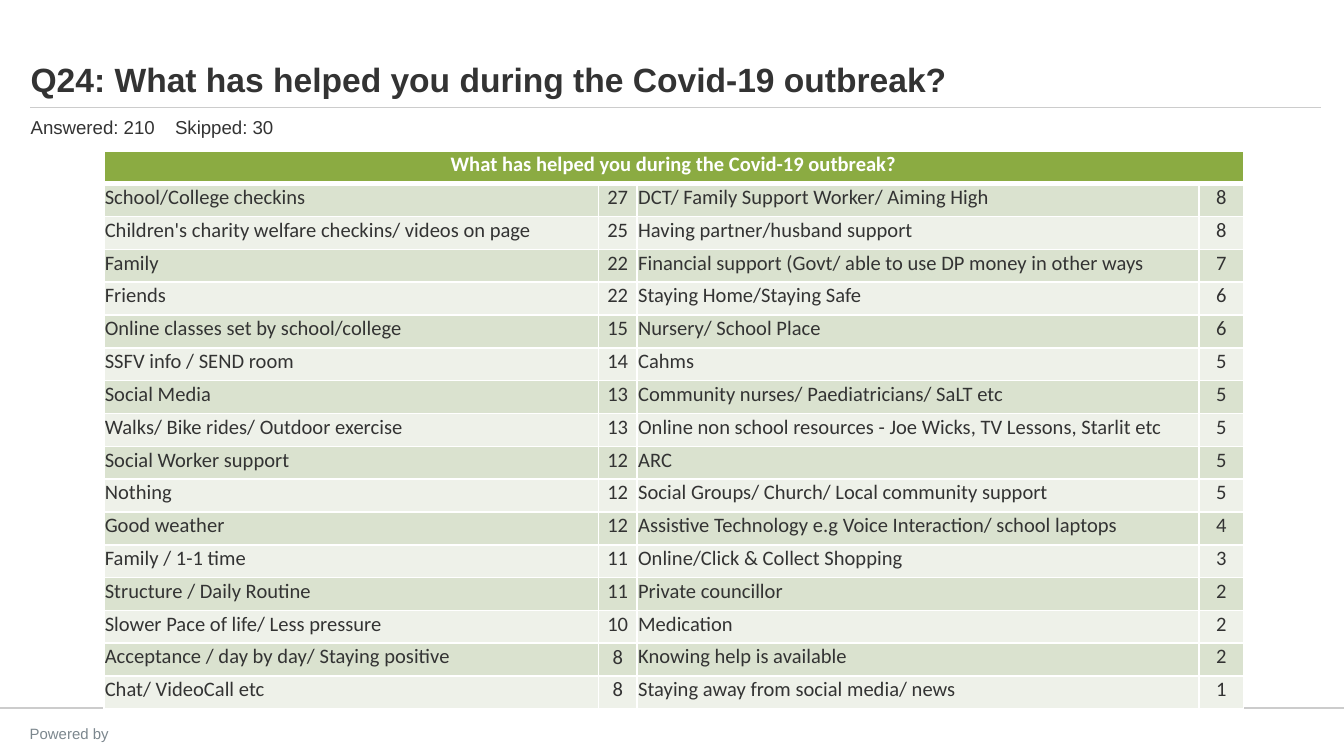
from lxml import etree
from pptx import Presentation
from pptx.dml.color import RGBColor
from pptx.enum.shapes import MSO_CONNECTOR
from pptx.enum.text import MSO_ANCHOR, PP_ALIGN
from pptx.oxml.ns import qn
from pptx.util import Cm, Pt

LEFT, CENTER = PP_ALIGN.LEFT, PP_ALIGN.CENTER
TOP, MIDDLE, BOTTOM = MSO_ANCHOR.TOP, MSO_ANCHOR.MIDDLE, MSO_ANCHOR.BOTTOM
STRAIGHT = MSO_CONNECTOR.STRAIGHT

COLORS = {
    "text": "333333",
    "footer": "7C878E",
    "rule": "CCCCCC",
    "header": "8BAB42",
    "odd": "DAE2CF",
    "even": "EEF1E9",
    "white": "FFFFFF",
}

QUESTION = "What has helped you during the Covid-19 outbreak?"
ANSWERS = [
    ("School/College checkins", 27, "DCT/ Family Support Worker/ Aiming High", 8),
    ("Children's charity welfare checkins/ videos on page", 25, "Having partner/husband support", 8),
    ("Family", 22, "Financial support (Govt/ able to use DP money in other ways", 7),
    ("Friends", 22, "Staying Home/Staying Safe", 6),
    ("Online classes set by school/college", 15, "Nursery/ School Place", 6),
    ("SSFV info / SEND room", 14, "Cahms", 5),
    ("Social Media", 13, "Community nurses/ Paediatricians/ SaLT etc", 5),
    ("Walks/ Bike rides/ Outdoor exercise", 13,
     "Online non school resources - Joe Wicks, TV Lessons, Starlit etc", 5),
    ("Social Worker support", 12, "ARC", 5),
    ("Nothing", 12, "Social Groups/ Church/ Local community support", 5),
    ("Good weather", 12, "Assistive Technology e.g Voice Interaction/ school laptops", 4),
    ("Family / 1-1 time", 11, "Online/Click & Collect Shopping", 3),
    ("Structure / Daily Routine", 11, "Private councillor", 2),
    ("Slower Pace of life/ Less pressure", 10, "Medication", 2),
    ("Acceptance / day by day/ Staying positive", 8, "Knowing help is available", 2),
    ("Chat/ VideoCall etc", 8, "Staying away from social media/ news", 1),
]


def write(tf, text, size=11, font="Calibri", color="text", bold=False, align=LEFT, tab=None):
    p = tf.paragraphs[0]
    p.alignment = align
    if tab:
        tabs = etree.SubElement(p._p.get_or_add_pPr(), qn("a:tabLst"))
        etree.SubElement(tabs, qn("a:tab"), pos=str(tab), algn="l")
    r = p.add_run()
    r.text = text
    r.font.size = Pt(size)
    r.font.name = font
    r.font.bold = bold
    r.font.color.rgb = RGBColor.from_string(COLORS[color])


def format_cell(cell, fill, anchor=BOTTOM, bottom_width=1):
    cell.vertical_anchor = anchor
    cell.margin_left = cell.margin_right = cell.margin_top = Cm(0.02)
    cell.margin_bottom = Cm(0.13)
    tcPr = cell._tc.get_or_add_tcPr()
    for side, width in (("L", 1), ("R", 1), ("T", 1), ("B", bottom_width)):
        ln = etree.SubElement(tcPr, qn(f"a:ln{side}"), w=str(Pt(width)))
        solid = etree.SubElement(ln, qn("a:solidFill"))
        etree.SubElement(solid, qn("a:srgbClr"), val=COLORS["white"])
    cell.fill.solid()
    cell.fill.fore_color.rgb = RGBColor.from_string(COLORS[fill])


prs = Presentation()
prs.slide_width, prs.slide_height = Cm(25.4), Cm(14.28)
s = prs.slides.add_slide(prs.slide_layouts[6])

# Rules above the footer and below the title
for x1, x2, y, width in ((0, 25.4, 13.38, 1), (0.57, 24.96, 2.03, 0.5)):
    line = s.shapes.add_connector(STRAIGHT, Cm(x1), Cm(y), Cm(x2), Cm(y))
    line.line.color.rgb = RGBColor.from_string(COLORS["rule"])
    line.line.width = Pt(width)
    etree.SubElement(line._element.spPr, qn("a:effectLst"))

# Footer, title and response count
for box, anchor, text, style in (
    ((-0.15, 13.56, 2.92, 0.46), TOP, "Powered by",
     dict(size=8, color="footer", align=CENTER)),
    ((0.33, 0.91, 22.86, 1.09), BOTTOM, f"Q24: {QUESTION}", dict(size=18, bold=True)),
    ((0.33, 2.06, 14.81, 0.69), TOP, "Answered: 210\tSkipped: 30",
     dict(size=10, tab=Cm(2.73))),
):
    tf = s.shapes.add_textbox(*[Cm(v) for v in box]).text_frame
    tf.word_wrap = True
    tf.vertical_anchor = anchor
    write(tf, text, font="Arial", **style)

# Answer table
col_widths = (9.35, 0.73, 10.62, 0.84)
row_height = 0.62
n_rows = len(ANSWERS) + 1
table = s.shapes.add_table(n_rows, len(col_widths), Cm(1.96), Cm(2.85),
                           Cm(sum(col_widths)), Cm(row_height * n_rows)).table
for col, width in zip(table.columns, col_widths):
    col.width = Cm(width)
for row in table.rows:
    row.height = Cm(row_height)

# Header across all columns
for cell in table.rows[0].cells:
    format_cell(cell, "header", bottom_width=3)
table.cell(0, 0).merge(table.cell(0, len(col_widths) - 1))
write(table.cell(0, 0).text_frame, QUESTION, color="white", bold=True, align=CENTER)

# Banded answers, counts centred
for i, answer in enumerate(ANSWERS, start=1):
    for j, value in enumerate(answer):
        cell = table.cell(i, j)
        format_cell(cell, "odd" if i % 2 else "even", anchor=MIDDLE if j == 1 else BOTTOM)
        write(cell.text_frame, str(value), align=CENTER if j % 2 else LEFT)

prs.save("out.pptx")
